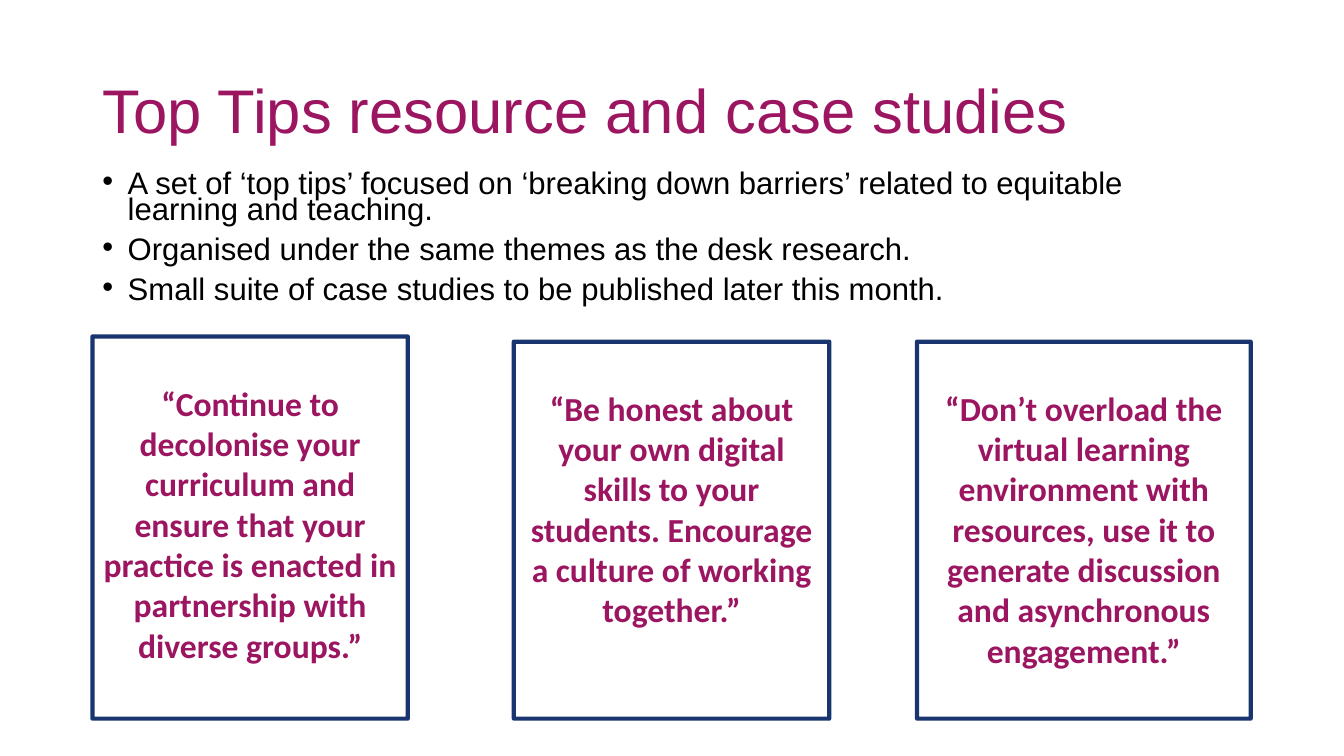
from dataclasses import dataclass

from lxml.etree import SubElement
from pptx import Presentation
from pptx.dml.color import RGBColor
from pptx.enum.shapes import MSO_SHAPE
from pptx.enum.text import MSO_ANCHOR, MSO_AUTO_SIZE, PP_ALIGN
from pptx.oxml.ns import qn
from pptx.util import Cm, Pt


@dataclass(frozen=True)
class Theme:
    accent: RGBColor = RGBColor(0x9C, 0x15, 0x60)
    border: RGBColor = RGBColor(0x00, 0x20, 0x60)
    ink: RGBColor = RGBColor(0, 0, 0)
    paper: RGBColor = RGBColor(0xFF, 0xFF, 0xFF)
    opacity: int = 90
    main_font: str = "Arial"
    quote_font: str = "Calibri"
    title_size: float = 44
    bullet_size: float = 22.2
    quote_size: float = 24


THEME = Theme()

TITLE = "Top Tips resource and case studies"
BULLETS = [
    "A set of ‘top tips’ focused on ‘breaking down barriers’ related to equitable learning and teaching.",
    "Organised under the same themes as the desk research.",
    "Small suite of case studies to be published later this month.",
]
QUOTES = [
    "“Continue to decolonise your curriculum and ensure that your practice is enacted in "
    "partnership with diverse groups.”",
    "“Be honest about your own digital skills to your students. Encourage a culture of "
    "working together.”",
    "“Don’t overload the virtual learning environment with resources, use it to generate "
    "discussion and asynchronous engagement.”",
]

# Regions in centimetres: left, top, width, height
TITLE_BOX = (2.33, 1.02, 29.21, 3.68)
BULLET_BOX = (2.33, 4.24, 29.21, 3.68)
QUOTE_BOXES = [
    (2.33, 8.48, 7.95, 9.63),
    (12.95, 8.61, 7.95, 9.5),
    (23.11, 8.61, 8.41, 9.5),
]


def lengths(box):
    return [Cm(value) for value in box]


def add_span(para, text, font, size, color, bold=False):
    span = para.add_run()
    span.text = text
    span.font.name = font
    span.font.size = Pt(size)
    span.font.color.rgb = color
    span.font.bold = bold


def set_bullet(para, indent):
    properties = para._p.get_or_add_pPr()
    properties.set("marL", str(indent))
    properties.set("indent", str(-indent))
    SubElement(properties, qn("a:buFont"), typeface=THEME.main_font)
    SubElement(properties, qn("a:buChar"), char="•")


def set_opacity(fill_parent):
    color = fill_parent.find(qn("a:solidFill"))[0]
    SubElement(color, qn("a:alpha"), val=str(THEME.opacity * 1000))


def place_title(page, box):
    title = page.shapes.title
    title.left, title.top, title.width, title.height = lengths(box)
    frame = title.text_frame
    frame.vertical_anchor = MSO_ANCHOR.MIDDLE
    frame.auto_size = MSO_AUTO_SIZE.NONE
    para = frame.paragraphs[0]
    para.alignment = PP_ALIGN.LEFT
    para.line_spacing = 0.9
    add_span(para, TITLE, THEME.main_font, THEME.title_size, THEME.accent)


def add_bullets(page, box):
    frame = page.shapes.add_textbox(*lengths(box)).text_frame
    frame.word_wrap = True
    for index, text in enumerate(BULLETS):
        para = frame.add_paragraph() if index else frame.paragraphs[0]
        para.line_spacing = 0.7
        para.space_before = Pt(10)
        set_bullet(para, Cm(0.64))
        add_span(para, text, THEME.main_font, THEME.bullet_size, THEME.ink)


def add_quote(page, box, text):
    card = page.shapes.add_shape(MSO_SHAPE.RECTANGLE, *lengths(box))
    card.shadow.inherit = False
    card.fill.solid()
    card.fill.fore_color.rgb = THEME.paper
    card.line.color.rgb = THEME.border
    card.line.width = Pt(3)
    properties = card._element.spPr
    set_opacity(properties)
    set_opacity(properties.find(qn("a:ln")))

    # The quote starts one line below the top edge
    frame = card.text_frame
    frame.word_wrap = True
    frame.vertical_anchor = MSO_ANCHOR.TOP
    frame.margin_top = Cm(1.16)
    para = frame.paragraphs[0]
    para.alignment = PP_ALIGN.CENTER
    add_span(para, text, THEME.quote_font, THEME.quote_size, THEME.accent, bold=True)


def build_tips_page(deck):
    page = deck.slides.add_slide(deck.slide_layouts[5])
    place_title(page, TITLE_BOX)
    add_bullets(page, BULLET_BOX)
    for box, text in zip(QUOTE_BOXES, QUOTES):
        add_quote(page, box, text)


def main():
    deck = Presentation()
    deck.slide_width, deck.slide_height = Cm(33.87), Cm(19.05)
    build_tips_page(deck)
    deck.save("out.pptx")


if __name__ == "__main__":
    main()
